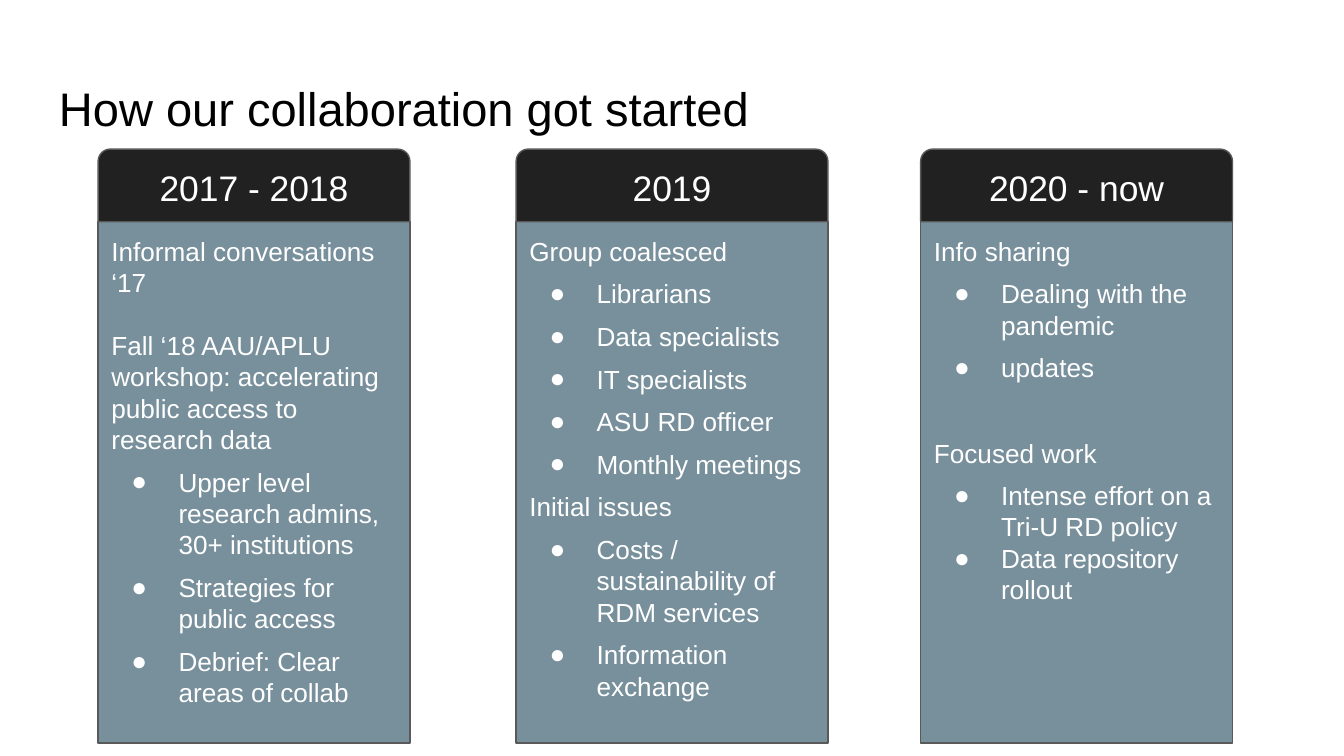
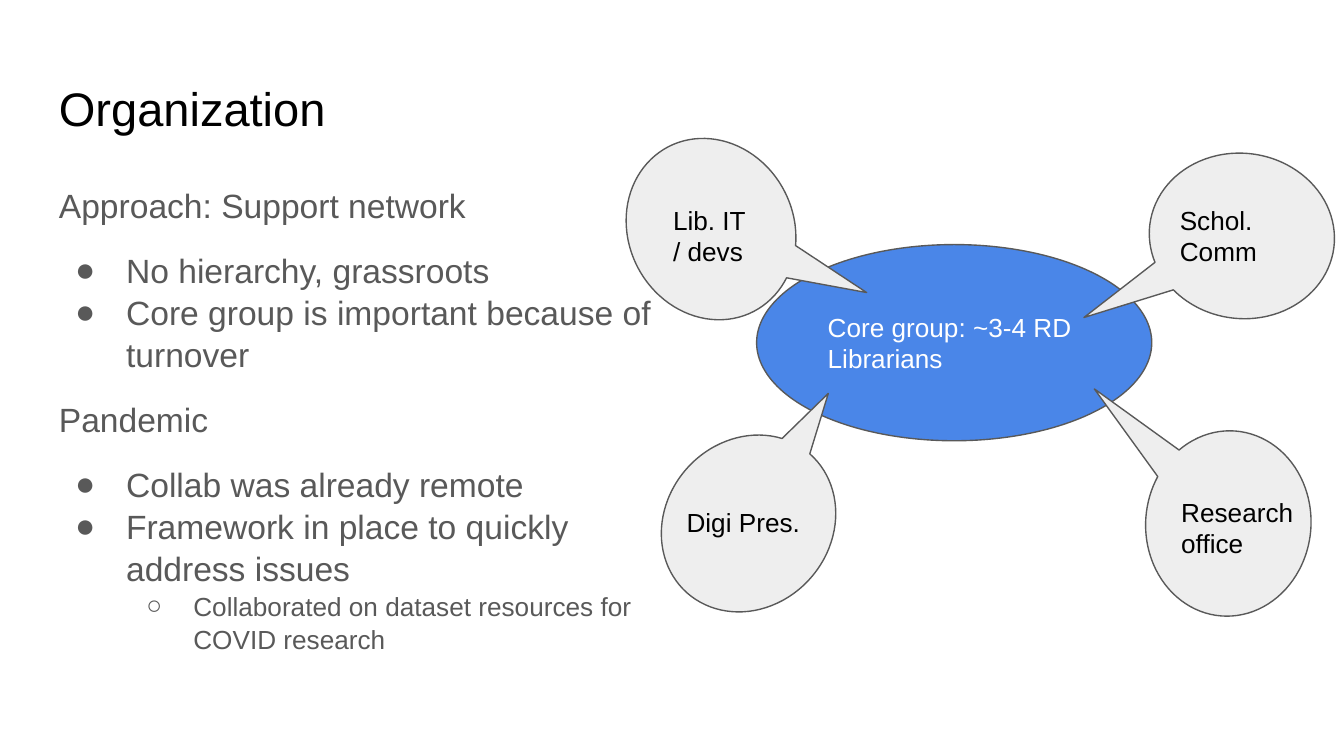
from dataclasses import dataclass

from lxml import etree
from pptx import Presentation
from pptx.dml.color import RGBColor
from pptx.enum.shapes import MSO_SHAPE
from pptx.enum.text import MSO_ANCHOR, PP_ALIGN
from pptx.oxml.ns import qn
from pptx.util import Inches, Pt

RECTANGLE = MSO_SHAPE.RECTANGLE
ROUND_TOP = MSO_SHAPE.ROUND_2_SAME_RECTANGLE
OVAL = MSO_SHAPE.OVAL
CALLOUT = MSO_SHAPE.OVAL_CALLOUT
TOP, MIDDLE = MSO_ANCHOR.TOP, MSO_ANCHOR.MIDDLE
LEFT, CENTER = PP_ALIGN.LEFT, PP_ALIGN.CENTER


@dataclass(frozen=True)
class Theme:
    font: str = "Arial"
    black: str = "000000"
    white: str = "FFFFFF"
    gray: str = "595959"
    header: str = "212121"
    card: str = "78909C"
    core: str = "4A86E8"
    bubble: str = "EEEEEE"
    title_size: float = 25.2
    header_size: float = 19
    body_size: float = 18
    text_size: float = 14
    line_width: float = 0.75
    inset: float = 0.1


THEME = Theme()

# Content: text items are (level, space before in points, text)
TIMELINE_TITLE = "How our collaboration got started"
TIMELINE = [
    (0.73, "2017 - 2018", [
        (0, 0, "Informal conversations ‘17"),
        (0, 16.8, "Fall ‘18 AAU/APLU workshop: accelerating public access to research data"),
        (1, 6, "Upper level research admins, 30+ institutions"),
        (1, 6, "Strategies for public access"),
        (1, 6, "Debrief: Clear areas of collab"),
    ]),
    (3.84, "2019", [
        (0, 6, "Group coalesced"),
        (1, 6, "Librarians"),
        (1, 6, "Data specialists"),
        (1, 6, "IT specialists"),
        (1, 6, "ASU RD officer"),
        (1, 6, "Monthly meetings"),
        (0, 6, "Initial issues"),
        (1, 6, "Costs / sustainability of RDM services"),
        (1, 6, "Information exchange"),
    ]),
    (6.85, "2020 - now", [
        (0, 6, "Info sharing"),
        (1, 6, "Dealing with the pandemic"),
        (1, 6, "updates"),
        (0, 28.8, "Focused work"),
        (1, 6, "Intense effort on a Tri-U RD policy"),
        (1, 0, "Data repository rollout"),
    ]),
]

ORGANIZATION_TITLE = "Organization"
APPROACH = [
    (0, 0, "Approach: Support network"),
    (1, 12, "No hierarchy, grassroots"),
    (1, 0, "Core group is important because of turnover"),
    (0, 12, "Pandemic"),
    (1, 12, "Collab was already remote"),
    (1, 0, "Framework in place to quickly \naddress issues"),
    (2, 0, "Collaborated on dataset resources for COVID research"),
]
CORE_GROUP = "Core group: ~3-4 RD Librarians"
# Bubble left and top, rotation, pointer tip, label text and label box
PARTNERS = [
    (4.6, 1.09, 62.6, (0.69, -0.66), "Lib. IT / devs", (4.91, 1.42, 0.77, 0.67)),
    (4.88, 3.28, 311.5, (0.81, -0.16), "Digi Pres.", (5.01, 3.67, 1.11, 0.44)),
    (8.45, 3.28, 274.3, (0.67, -0.87), "Research office", (8.69, 3.59, 1.11, 0.67)),
    (8.55, 1.14, 187.2, (0.79, -0.61), "Schol. Comm", (8.68, 1.42, 1.11, 0.67)),
]

# Layout in inches
SLIDE_WIDTH = 10
TITLE_BOX = (0.34, 0.49, 9.32, 0.63)
APPROACH_BOX = (0.34, 1.26, 5.1, 3.74)
CORE_BOX = (5.63, 1.82, 2.94, 1.46)
BUBBLE_SIZE = (1.38, 1.23)
CARD_WIDTH, CARD_HEIGHT = 2.32, 3.88
HEADER_TOP, HEADER_HEIGHT = 1.11, 0.54
BULLETS = {1: "●", 2: "○"}


def add_bullet(paragraph, level, size, color):
    """Give a paragraph a hanging bullet; larger text hangs further."""
    properties = paragraph._p.get_or_add_pPr()
    hang = 0.38 if size == THEME.body_size else 0.35
    properties.set("marL", str(Inches(0.5 * level)))
    properties.set("indent", str(-Inches(hang)))
    bullet_color = etree.SubElement(properties, qn("a:buClr"))
    etree.SubElement(bullet_color, qn("a:srgbClr"), val=color)
    etree.SubElement(properties, qn("a:buFont"), typeface=THEME.font)
    etree.SubElement(properties, qn("a:buChar"), char=BULLETS[level])


def write(shape, items, size, color, anchor=TOP, align=LEFT, line_spacing=None):
    """Fill a shape with text items, formatted alike."""
    frame = shape.text_frame
    frame.word_wrap = True
    frame.vertical_anchor = anchor
    frame.margin_left = frame.margin_right = Inches(THEME.inset)
    frame.margin_top = frame.margin_bottom = Inches(THEME.inset)
    for index, (level, space_before, text) in enumerate(items):
        paragraph = frame.add_paragraph() if index else frame.paragraphs[0]
        paragraph.text = text
        paragraph.alignment = align
        paragraph.space_before = Pt(space_before)
        paragraph.line_spacing = line_spacing
        text_size = THEME.text_size if level == 2 else size
        for run in paragraph.runs:
            run.font.name = THEME.font
            run.font.size = Pt(text_size)
            run.font.color.rgb = RGBColor.from_string(color)
        if level:
            paragraph.level = level - 1
            add_bullet(paragraph, level, text_size, color)


def add_text(slide, box, items, size, color, **options):
    shape = slide.shapes.add_textbox(*map(Inches, box))
    write(shape, items, size, color, **options)


def add_block(slide, kind, box, fill):
    """Add a filled shape with the thin gray outline."""
    shape = slide.shapes.add_shape(kind, *map(Inches, box))
    shape.shadow.inherit = False
    shape.fill.solid()
    shape.fill.fore_color.rgb = RGBColor.from_string(fill)
    shape.line.color.rgb = RGBColor.from_string(THEME.gray)
    shape.line.width = Pt(THEME.line_width)
    return shape


def add_titled_slide(presentation, title):
    slide = presentation.slides.add_slide(presentation.slide_layouts[6])
    add_text(slide, TITLE_BOX, [(0, 0, title)], THEME.title_size, THEME.black)
    return slide


def build_timeline(presentation):
    slide = add_titled_slide(presentation, TIMELINE_TITLE)
    for left, period, items in TIMELINE:
        # Card below its rounded header
        card_box = (left, HEADER_TOP + HEADER_HEIGHT, CARD_WIDTH, CARD_HEIGHT)
        card = add_block(slide, RECTANGLE, card_box, THEME.card)
        write(card, items, THEME.text_size, THEME.white)
        header_box = (left, HEADER_TOP, CARD_WIDTH, HEADER_HEIGHT)
        header = add_block(slide, ROUND_TOP, header_box, THEME.header)
        write(header, [(0, 0, period)], THEME.header_size, THEME.white,
              anchor=MIDDLE, align=CENTER)


def build_organization(presentation):
    slide = add_titled_slide(presentation, ORGANIZATION_TITLE)
    add_text(slide, APPROACH_BOX, APPROACH, THEME.body_size, THEME.gray,
             line_spacing=1.05)

    # Core group with partner bubbles pointing at it
    core = add_block(slide, OVAL, CORE_BOX, THEME.core)
    write(core, [(0, 0, CORE_GROUP)], THEME.text_size, THEME.white, anchor=MIDDLE)
    for left, top, rotation, tip, label, label_box in PARTNERS:
        bubble = add_block(slide, CALLOUT, (left, top, *BUBBLE_SIZE), THEME.bubble)
        bubble.rotation = rotation
        bubble.adjustments[0], bubble.adjustments[1] = tip
        add_text(slide, label_box, [(0, 0, label)], THEME.text_size, THEME.black)


def main():
    presentation = Presentation()
    presentation.slide_width = Inches(SLIDE_WIDTH)
    presentation.slide_height = Inches(SLIDE_WIDTH * 9 / 16)
    build_timeline(presentation)
    build_organization(presentation)
    presentation.save("out.pptx")


if __name__ == "__main__":
    main()
